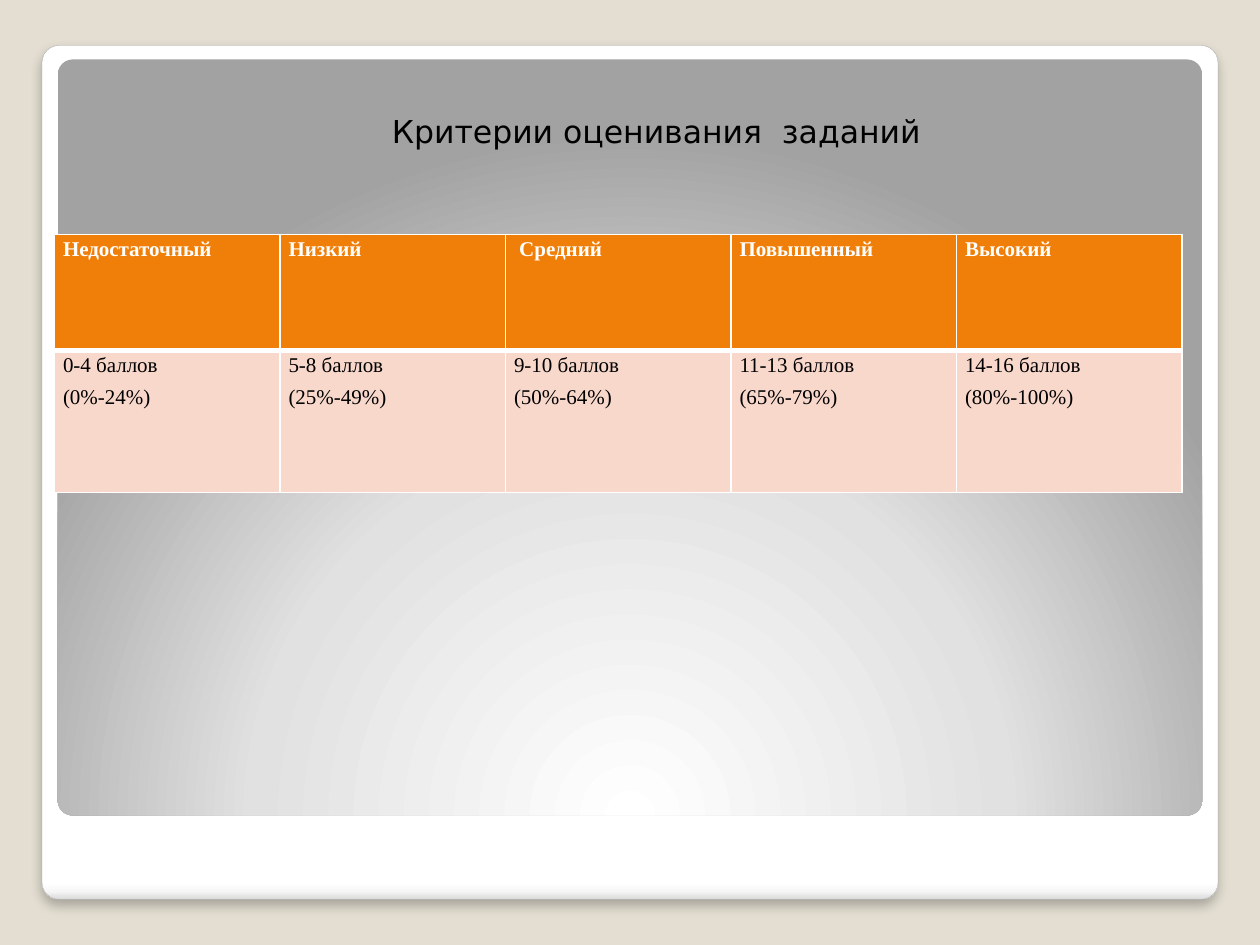
from lxml import etree
from pptx import Presentation
from pptx.dml.color import RGBColor
from pptx.enum import shapes, text
from pptx.oxml import ns
from pptx.util import Pt

TITLE = "Критерии оценивания  заданий"
LEVELS = [
    ("Недостаточный", "0-4 баллов", "(0%-24%)"),
    ("Низкий", "5-8 баллов", "(25%-49%)"),
    (" Средний", "9-10 баллов", "(50%-64%)"),
    ("Повышенный", "11-13 баллов", "(65%-79%)"),
    ("Высокий", "14-16 баллов", "(80%-100%)"),
]
THEME = {
    "back": "E3DED1", "edge": "A4A4A4", "white": "FFFFFF", "ink": "000000",
    "head": "F07F09", "body": "F9D8CC",
    "title": ("DejaVu Sans", 18), "cell": ("Times New Roman", 12),
    "card": [(0, "FFFFFF"), (98, "FFFFFF"), (99, "F7F7F7"), (100, "DADADA")],
    "glow": [(0, "FFFFFF"), (55, "E1E1E1"), (100, "A2A2A2")],
}
CARD = (24, 26, 672, 488)
PANEL = (33, 34, 654, 432)
HEAD = (144.7, 60.5, 436.3, 29)
GRID = (31, 134, 644.4, 147.6)
ROWS = (66.2, 81.4)
INDENT = 72


def rgb(name):
    return RGBColor.from_string(THEME[name])


def node(parent, tag, **attrs):
    values = {key: str(value) for key, value in attrs.items()}
    return etree.SubElement(parent, ns.qn(tag), values)


def write(frame, lines, font="cell", color="ink", bold=False, **layout):
    """Fill a text frame; layout holds paragraph attributes."""
    frame.text = "\n".join(lines)
    for para in frame.paragraphs:
        for key, value in layout.items():
            setattr(para, key, value)
        for run in para.runs:
            run.font.name, size = THEME[font]
            run.font.size = Pt(size)
            run.font.bold = bold
            run.font.color.rgb = rgb(color)


def panel(slide, box, stops, radial=False):
    shape = slide.shapes.add_shape(
        shapes.MSO_SHAPE.ROUNDED_RECTANGLE, *map(Pt, box))
    shape.adjustments[0] = 0.02
    shape.shadow.inherit = False
    shape.line.fill.background()
    shape.fill.gradient()
    grad = shape._element.spPr.find(ns.qn("a:gradFill"))
    for child in list(grad):
        grad.remove(child)
    items = node(grad, "a:gsLst")
    for pos, color in THEME[stops]:
        node(node(items, "a:gs", pos=pos * 1000), "a:srgbClr", val=color)
    if radial:
        way = node(grad, "a:path", path="circle")
        node(way, "a:fillToRect", l=50000, t=175000, r=50000, b=-75000)
    else:
        node(grad, "a:lin", ang=5400000, scaled=0)
    return shape


def shade(shape):
    effects = shape._element.spPr.find(ns.qn("a:effectLst"))
    drop = node(effects, "a:outerShdw", blurRad=Pt(6), dist=Pt(4),
                dir=5400000, algn="t", rotWithShape=0)
    node(node(drop, "a:srgbClr", val=THEME["ink"]), "a:alpha", val=25000)


def border(cell, **widths):
    props = cell._tc.get_or_add_tcPr()
    for side in "LRTB":
        line = node(props, "a:ln" + side, w=Pt(widths.get(side, 1)))
        node(node(line, "a:solidFill"), "a:srgbClr", val=THEME["white"])


def style(cell, lines, fill, color="ink", bold=False, **widths):
    cell.margin_left = cell.margin_right = Pt(5)
    cell.margin_top = cell.margin_bottom = 0
    border(cell, **widths)
    cell.fill.solid()
    cell.fill.fore_color.rgb = rgb(fill)
    write(cell.text_frame, lines, color=color, bold=bold, line_spacing=1.15,
          space_before=Pt(3.2), alignment=text.PP_ALIGN.JUSTIFY)


def grid(slide):
    table = slide.shapes.add_table(
        len(ROWS), len(LEVELS), *map(Pt, GRID)).table
    table.first_row = table.horz_banding = False
    for row, height in zip(table.rows, ROWS):
        row.height = Pt(height)
    for col, (name, *marks) in enumerate(LEVELS):
        table.columns[col].width = Pt(GRID[2] / len(LEVELS))
        style(table.cell(0, col), [name], "head", "white", True, B=3)
        style(table.cell(1, col), marks, "body", T=3)


def heading(slide):
    title = slide.shapes.title
    title.left, title.top, title.width, title.height = map(Pt, HEAD)
    frame = title.text_frame
    frame.word_wrap = True
    frame.auto_size = text.MSO_AUTO_SIZE.NONE
    frame.vertical_anchor = text.MSO_ANCHOR.TOP
    frame.margin_left = Pt(7.2 + INDENT)
    write(frame, [TITLE], font="title", alignment=text.PP_ALIGN.LEFT)
    slide.shapes._spTree.append(title._element)  # bring to front


def main():
    deck = Presentation()
    deck.slide_width, deck.slide_height = Pt(720), Pt(540)
    slide = deck.slides.add_slide(deck.slide_layouts[5])
    slide.background.fill.solid()
    slide.background.fill.fore_color.rgb = rgb("back")
    card = panel(slide, CARD, "card")
    card.line.color.rgb = rgb("edge")
    card.line.width = Pt(0.16)
    shade(card)
    panel(slide, PANEL, "glow", radial=True)
    grid(slide)
    heading(slide)
    deck.save("out.pptx")


if __name__ == "__main__":
    main()
